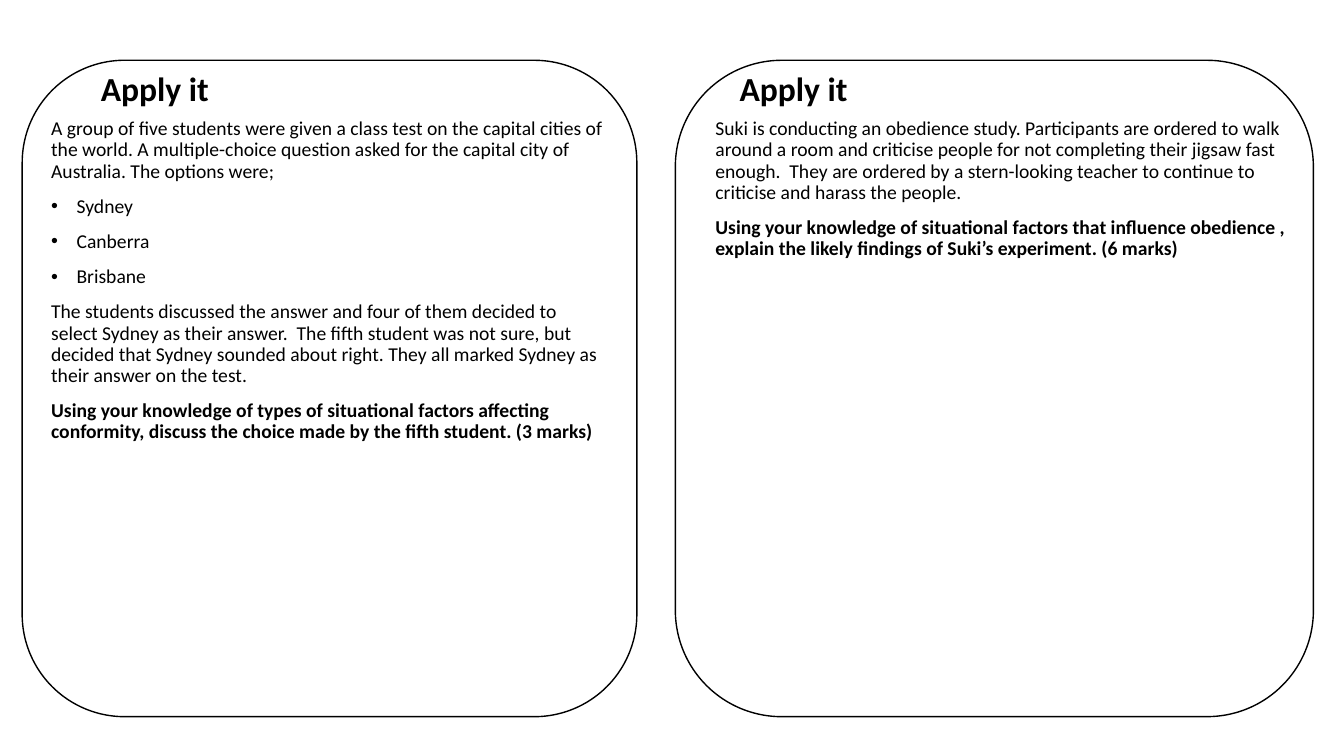
from lxml.etree import SubElement
from pptx import Presentation
from pptx.dml.color import RGBColor
from pptx.enum.shapes import MSO_SHAPE
from pptx.enum.text import MSO_ANCHOR
from pptx.oxml.ns import qn
from pptx.util import Cm, Pt

BLACK = RGBColor(0x00, 0x00, 0x00)
TOP, TITLE_HEIGHT = 1.52, 1.35
BODY_HEIGHT, FRAME_HEIGHT = 11.18, 16.54
BULLET_INDENT = Cm(0.64)


def write_text(paragraph, text, size=14, bold=False, bullet=False, space_before=10):
    """Fill one paragraph with formatted text."""
    paragraph.line_spacing = 0.9
    paragraph.space_before = Pt(space_before)
    if bullet:
        properties = paragraph._p.get_or_add_pPr()
        properties.set("marL", str(BULLET_INDENT))
        properties.set("indent", str(-BULLET_INDENT))
        SubElement(properties, qn("a:buFont")).set("typeface", "Arial")
        SubElement(properties, qn("a:buChar")).set("char", "•")
    run = paragraph.add_run()
    run.text = text
    run.font.name = "Calibri"
    run.font.size = Pt(size)
    run.font.bold = bold
    run.font.color.rgb = BLACK


class TaskSlide:
    def __init__(self, slide):
        self.shapes = slide.shapes

    def text(self, left, top, width, height, lines, anchor=MSO_ANCHOR.TOP):
        box = self.shapes.add_textbox(Cm(left), Cm(top), Cm(width), Cm(height))
        frame = box.text_frame
        frame.word_wrap = True
        frame.vertical_anchor = anchor
        for index, (line, style) in enumerate(lines):
            if index == 0:
                write_text(frame.paragraphs[0], line, space_before=0, **style)
            else:
                write_text(frame.add_paragraph(), line, **style)

    def frame(self, left, width):
        outline = self.shapes.add_shape(
            MSO_SHAPE.ROUNDED_RECTANGLE, Cm(left), Cm(TOP), Cm(width), Cm(FRAME_HEIGHT))
        outline.shadow.inherit = False
        outline.fill.background()
        outline.line.color.rgb = BLACK
        outline.line.width = Pt(1)

    def task(self, title_span, body_span, frame_span, lines):
        title_left, title_width = title_span
        body_left, body_width = body_span
        self.text(title_left, TOP, title_width, TITLE_HEIGHT,
                  [("Apply it", {"size": 24, "bold": True})], MSO_ANCHOR.BOTTOM)
        self.text(body_left, TOP + TITLE_HEIGHT, body_width, BODY_HEIGHT, lines)
        self.frame(*frame_span)


PLAIN, BULLET, QUESTION = {}, {"bullet": True}, {"bold": True}

CONFORMITY = [
    ("A group of five students were given a class test on the capital cities of "
     "the world. A multiple-choice question asked for the capital city of "
     "Australia. The options were;", PLAIN),
    ("Sydney", BULLET),
    ("Canberra", BULLET),
    ("Brisbane", BULLET),
    ("The students discussed the answer and four of them decided to select Sydney "
     "as their answer.  The fifth student was not sure, but decided that Sydney "
     "sounded about right. They all marked Sydney as their answer on the test.", PLAIN),
    ("Using your knowledge of types of situational factors affecting conformity, "
     "discuss the choice made by the fifth student. (3 marks)", QUESTION),
]
OBEDIENCE = [
    ("Suki is conducting an obedience study. Participants are ordered to walk "
     "around a room and criticise people for not completing their jigsaw fast "
     "enough.  They are ordered by a stern-looking teacher to continue to "
     "criticise and harass the people.", PLAIN),
    ("Using your knowledge of situational factors that influence obedience , "
     "explain the likely findings of Suki’s experiment. (6 marks)", QUESTION),
]


def main():
    deck = Presentation()
    deck.slide_width, deck.slide_height = Cm(33.87), Cm(19.05)
    page = TaskSlide(deck.slides.add_slide(deck.slide_layouts[6]))

    # Left task: conformity
    page.task((2.29, 13.28), (1.04, 14.53), (0.56, 15.49), CONFORMITY)
    # Right task: obedience
    page.task((18.39, 14.4), (17.78, 15.04), (17.02, 16.08), OBEDIENCE)

    deck.save("out.pptx")


if __name__ == "__main__":
    main()
